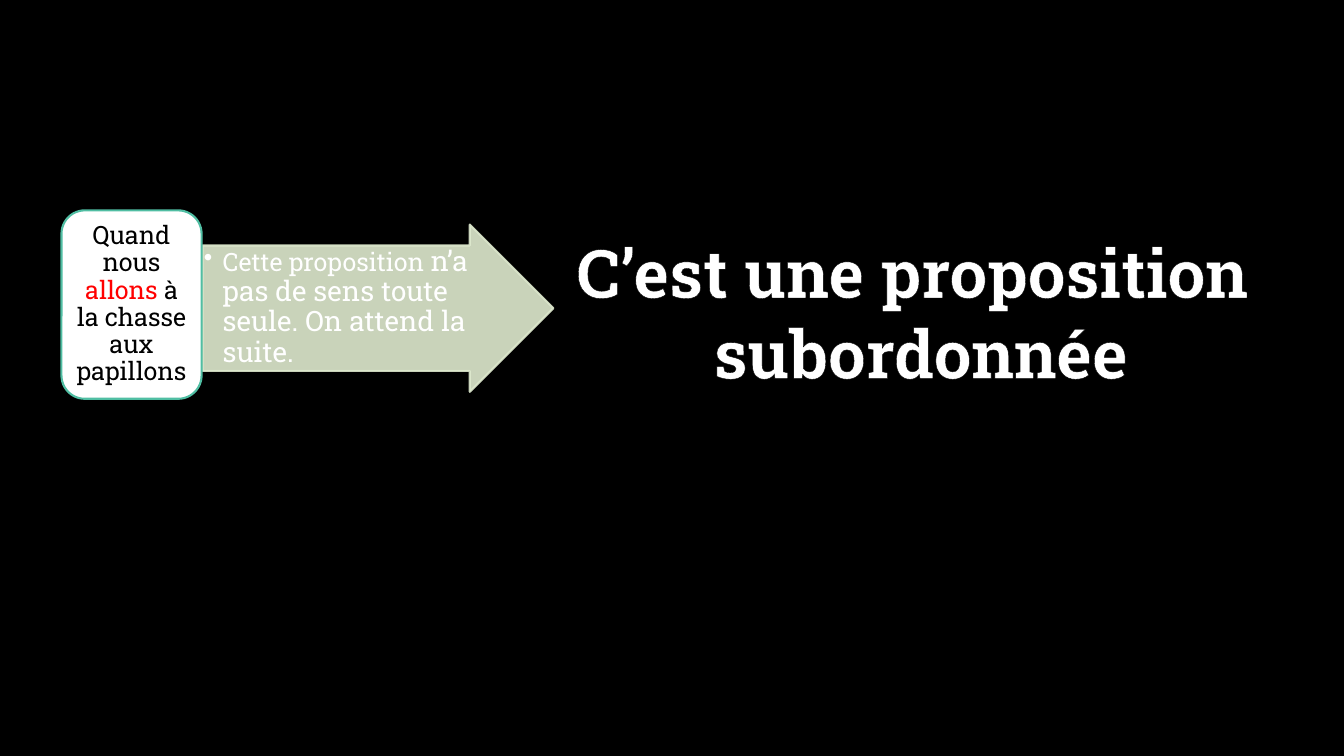
from lxml import etree
from pptx import Presentation
from pptx.dml.color import RGBColor
from pptx.enum import shapes, text
from pptx.oxml.ns import qn
from pptx.util import Pt

COLORS = {"black": "000000", "white": "FFFFFF", "red": "FF0000",
          "sage": "DFEACF", "teal": "50BEA3"}
FONT = "Roboto Slab"

CLAUSE = [("Quand nous ", 18, "black"), ("allons ", 18, "red"),
          ("à la chasse aux papillons", 18, "black")]
REMARK = [("Cette proposition ", 18, "white"),
          ("n’a pas de sens toute seule. On attend la suite.", 20, "white")]
HEADLINE = [[("C’est une proposition ", 48, "white")],
            [("subordonnée", 48, "white")]]

CARD = (43.9, 150.3, 100.1, 134.6)
ARROW = (144.7, 160.4, 250.6, 119.5)
REMARK_BOX = (144.7, 175.7, 205.9, 89.3)
HEADLINE_BOX = (395.3, 161.3, 524.9, 123.8)


def color(name):
    return RGBColor.from_string(COLORS[name])


def add_panel(page, kind, place, fill, line):
    panel = page.shapes.add_shape(kind, *map(Pt, place))
    panel.shadow.inherit = False
    panel.fill.solid()
    panel.fill.fore_color.rgb = color(fill)
    panel.line.color.rgb = color(line)
    panel.line.width = Pt(1.5)
    return panel


def set_frame(frame, anchor, across, down):
    frame.word_wrap = True
    frame.vertical_anchor = anchor
    frame.margin_left = frame.margin_right = Pt(across)
    frame.margin_top = frame.margin_bottom = Pt(down)


def write(para, spans, align, spacing):
    para.alignment = align
    para.line_spacing = spacing
    para.font.name = FONT
    for words, size, shade in spans:
        span = para.add_run()
        span.text = words
        span.font.name = FONT
        span.font.size = Pt(size)
        span.font.color.rgb = color(shade)


def outline(span, shade, width):
    line = etree.Element(qn("a:ln"), w=str(Pt(width)))
    fill = etree.SubElement(line, qn("a:solidFill"))
    etree.SubElement(fill, qn("a:srgbClr"), val=COLORS[shade])
    span.font._element.insert(0, line)


def add_bullet(para, indent):
    props = para._p.get_or_add_pPr()
    props.set("marL", str(Pt(indent)))
    props.set("indent", str(-Pt(indent)))
    etree.SubElement(props, qn("a:buChar"), char="•")
    defaults = props.find(qn("a:defRPr"))
    if defaults is not None:
        props.append(defaults)


def main():
    deck = Presentation()
    deck.slide_width, deck.slide_height = Pt(960), Pt(540)
    page = deck.slides.add_slide(deck.slide_layouts[6])
    page.background.fill.solid()
    page.background.fill.fore_color.rgb = color("black")

    arrow = add_panel(page, shapes.MSO_SHAPE.RIGHT_ARROW, ARROW, "sage", "sage")
    arrow.adjustments[0], arrow.adjustments[1] = 0.75, 0.5
    for shade in arrow._element.spPr.iter(qn("a:srgbClr")):
        etree.SubElement(shade, qn("a:alpha"), val="90000")

    remark = page.shapes.add_textbox(*map(Pt, REMARK_BOX)).text_frame
    set_frame(remark, text.MSO_ANCHOR.TOP, 0.9, 0.9)
    write(remark.paragraphs[0], REMARK, text.PP_ALIGN.LEFT, 0.9)
    add_bullet(remark.paragraphs[0], 13.5)

    card = add_panel(page, shapes.MSO_SHAPE.ROUNDED_RECTANGLE, CARD, "white", "teal")
    set_frame(card.text_frame, text.MSO_ANCHOR.MIDDLE, 5, 2.7)
    write(card.text_frame.paragraphs[0], CLAUSE, text.PP_ALIGN.CENTER, 0.9)

    headline = page.shapes.add_textbox(*map(Pt, HEADLINE_BOX)).text_frame
    set_frame(headline, text.MSO_ANCHOR.TOP, 7.2, 3.6)
    for index, spans in enumerate(HEADLINE):
        para = headline.add_paragraph() if index else headline.paragraphs[0]
        write(para, spans, text.PP_ALIGN.CENTER, 1.0)
        for span in para.runs:
            span.font.bold = True
            outline(span, "black", 1.06)

    deck.save("out.pptx")


if __name__ == "__main__":
    main()
